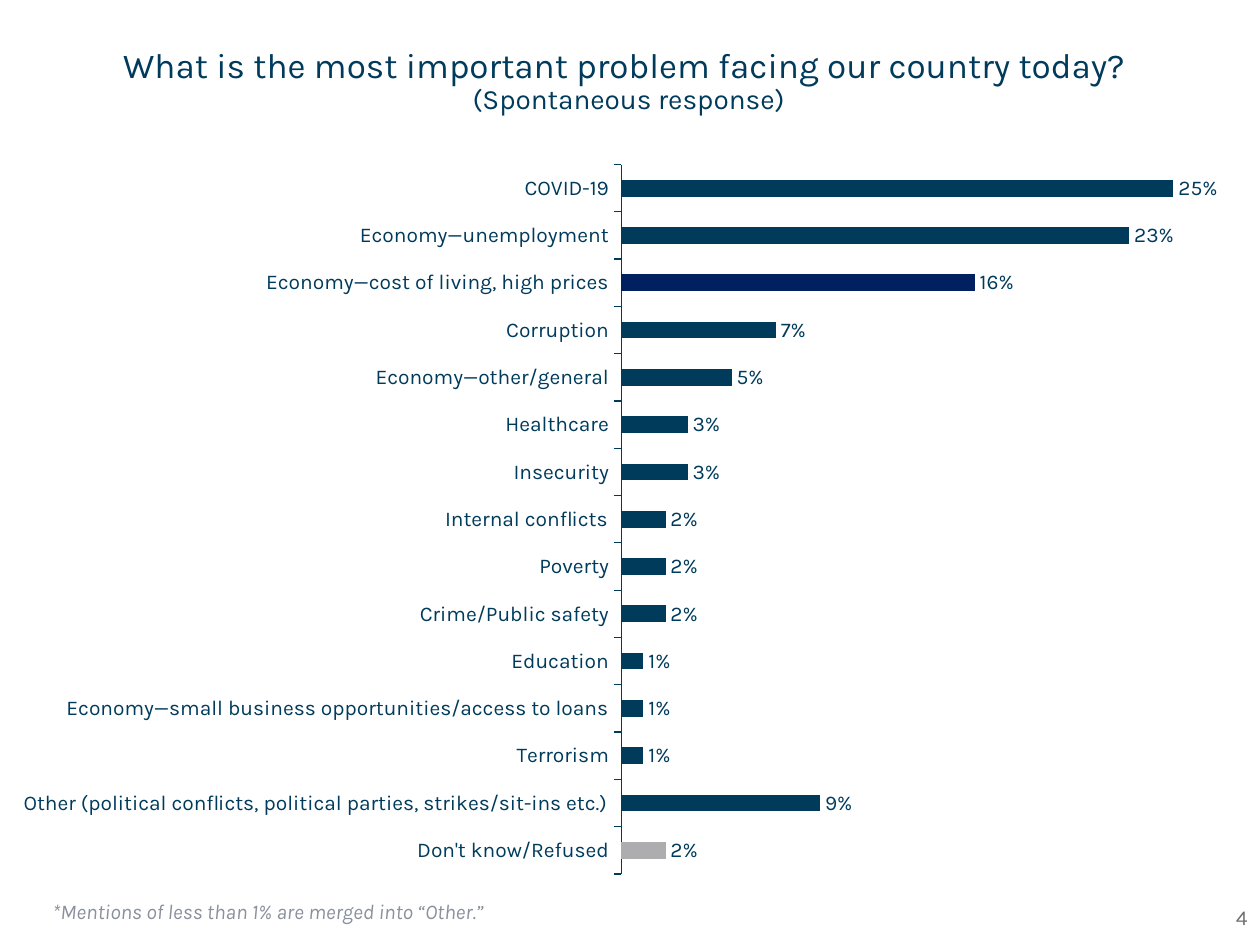
from lxml import etree
from pptx import Presentation
from pptx.chart.data import CategoryChartData
from pptx.dml.color import RGBColor
from pptx.enum.chart import (XL_CHART_TYPE as ChartType, XL_LABEL_POSITION as LabelPosition,
                             XL_TICK_LABEL_POSITION as TickLabels, XL_TICK_MARK as TickMark)
from pptx.enum.text import MSO_ANCHOR as Anchor, PP_ALIGN as Align
from pptx.oxml.ns import qn
from pptx.util import Inches, Pt

FONT = "Karla"
TEAL, NAVY, SILVER = "003B5C", "002060", "ADADB0"
NOTE_GRAY, NUMBER_GRAY = "89919C", "6D6E70"

PROBLEMS = [
    ("COVID-19", 0.25),
    ("Economy—unemployment", 0.23),
    ("Economy—cost of living, high prices", 0.16),
    ("Corruption", 0.07),
    ("Economy—other/general", 0.05),
    ("Healthcare", 0.03),
    ("Insecurity", 0.03),
    ("Internal conflicts", 0.02),
    ("Poverty", 0.02),
    ("Crime/Public safety", 0.02),
    ("Education", 0.01),
    ("Economy—small business opportunities/access to loans", 0.01),
    ("Terrorism", 0.01),
    ("Other (political conflicts, political parties, strikes/sit-ins etc.)", 0.09),
    ("Don't know/Refused", 0.02),
]
HIGHLIGHTS = {2: NAVY, 14: SILVER}


def rgb(color):
    return RGBColor.from_string(color)


def set_font(font, size, color, italic=None):
    font.name, font.size, font.italic = FONT, Pt(size), italic
    font.color.rgb = rgb(color)


def place_plot(chart, **fractions):
    """Fix the inner plot area at x, y, w, h fractions of the chart frame."""
    plot_area = chart.plots[0]._element.getparent()
    for old in plot_area.findall(qn("c:layout")):
        plot_area.remove(old)
    layout = etree.Element(qn("c:layout"))
    manual = etree.SubElement(layout, qn("c:manualLayout"))
    settings = {"layoutTarget": "inner", "xMode": "edge", "yMode": "edge", **fractions}
    for name, value in settings.items():
        etree.SubElement(manual, qn(f"c:{name}")).set("val", str(value))
    plot_area.insert(0, layout)


class SlideBuilder:
    def __init__(self, page):
        self.page = page

    def text(self, left, top, width, height, lines, color,
             align=Align.LEFT, anchor=Anchor.TOP, italic=None, spacing=None):
        """Add one paragraph; lines holds (text, size) pairs split by line breaks."""
        box = self.page.shapes.add_textbox(Inches(left), Inches(top), Inches(width), Inches(height))
        frame = box.text_frame
        frame.word_wrap = True
        frame.vertical_anchor = anchor
        para = frame.paragraphs[0]
        para.alignment = align
        para.line_spacing = spacing
        set_font(para.font, lines[0][1], color, italic)
        for index, (words, size) in enumerate(lines):
            if index:
                para.add_line_break()
            span = para.add_run()
            span.text = words
            if size != lines[0][1]:
                span.font.size = Pt(size)

    def bar_chart(self, left, top, width, height, rows, highlights):
        data = CategoryChartData(number_format="0%")
        data.categories = [name for name, _ in rows]
        data.add_series("Series 1", [share for _, share in rows])
        chart = self.page.shapes.add_chart(
            ChartType.BAR_CLUSTERED, Inches(left), Inches(top), Inches(width), Inches(height), data
        ).chart
        chart.has_legend = False
        chart.has_title = False
        set_font(chart.font, 12, TEAL)

        categories = chart.category_axis
        categories.reverse_order = True
        categories.has_major_gridlines = False
        categories.major_tick_mark = TickMark.OUTSIDE
        categories.format.line.color.rgb = rgb(TEAL)
        categories.format.line.width = Pt(0.75)

        values = chart.value_axis
        values.minimum_scale, values.maximum_scale = 0, 0.3
        values.has_major_gridlines = False
        values.major_tick_mark = TickMark.OUTSIDE
        values.tick_label_position = TickLabels.NONE
        values.format.line.fill.background()

        plot = chart.plots[0]
        plot.gap_width = 182
        plot.vary_by_categories = False
        series = plot.series[0]
        series.invert_if_negative = False
        series.format.fill.solid()
        series.format.fill.fore_color.rgb = rgb(TEAL)
        for index, color in highlights.items():
            fill = series.points[index].format.fill
            fill.solid()
            fill.fore_color.rgb = rgb(color)

        labels = series.data_labels
        labels.show_value = True
        labels.position = LabelPosition.OUTSIDE_END
        labels.number_format = "0%"
        labels.number_format_is_linked = False
        set_font(labels.font, 12, TEAL)
        place_plot(chart, x=0.484, y=0.028, w=0.516, h=0.948)


def main():
    deck = Presentation()
    deck.slide_width, deck.slide_height = Inches(10), Inches(7.5)
    slide = SlideBuilder(deck.slides.add_slide(deck.slide_layouts[6]))

    slide.text(7.75, 7.08, 2.25, 0.4, [("4", 12)], NUMBER_GRAY, Align.RIGHT, Anchor.MIDDLE)
    slide.text(0.32, 0.16, 9.34, 0.98,
               [("What is the most important problem facing our country today? ", 20),
                ("(Spontaneous response)", 16)],
               TEAL, Align.CENTER, Anchor.MIDDLE, spacing=0.9)
    slide.bar_chart(0, 1.14, 10.19, 5.94, PROBLEMS, HIGHLIGHTS)
    slide.text(0.32, 7.08, 9.14, 0.3,
               [("*Mentions of less than 1% are merged into “Other.”", 12)], NOTE_GRAY, italic=True)
    deck.save("out.pptx")


if __name__ == "__main__":
    main()
